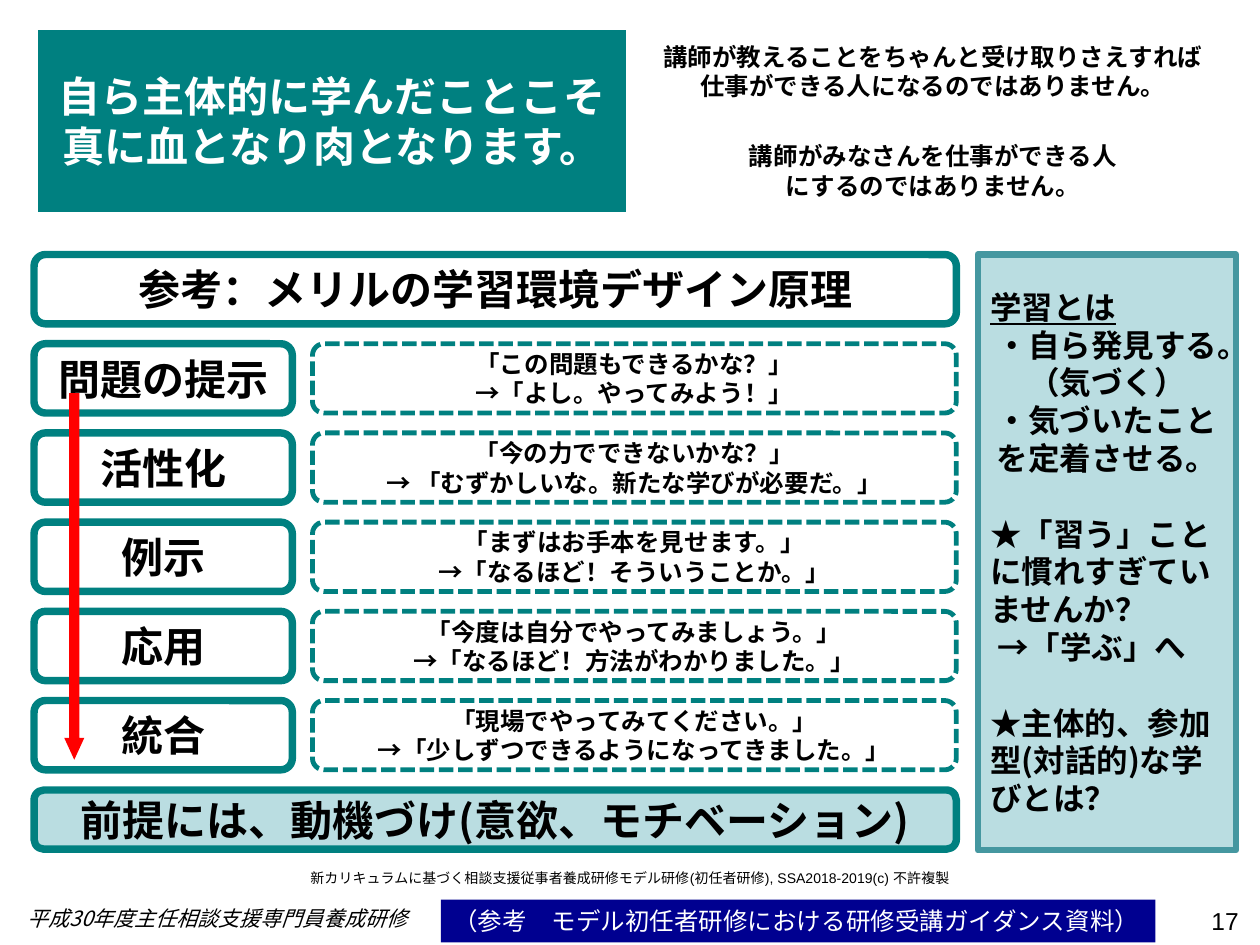
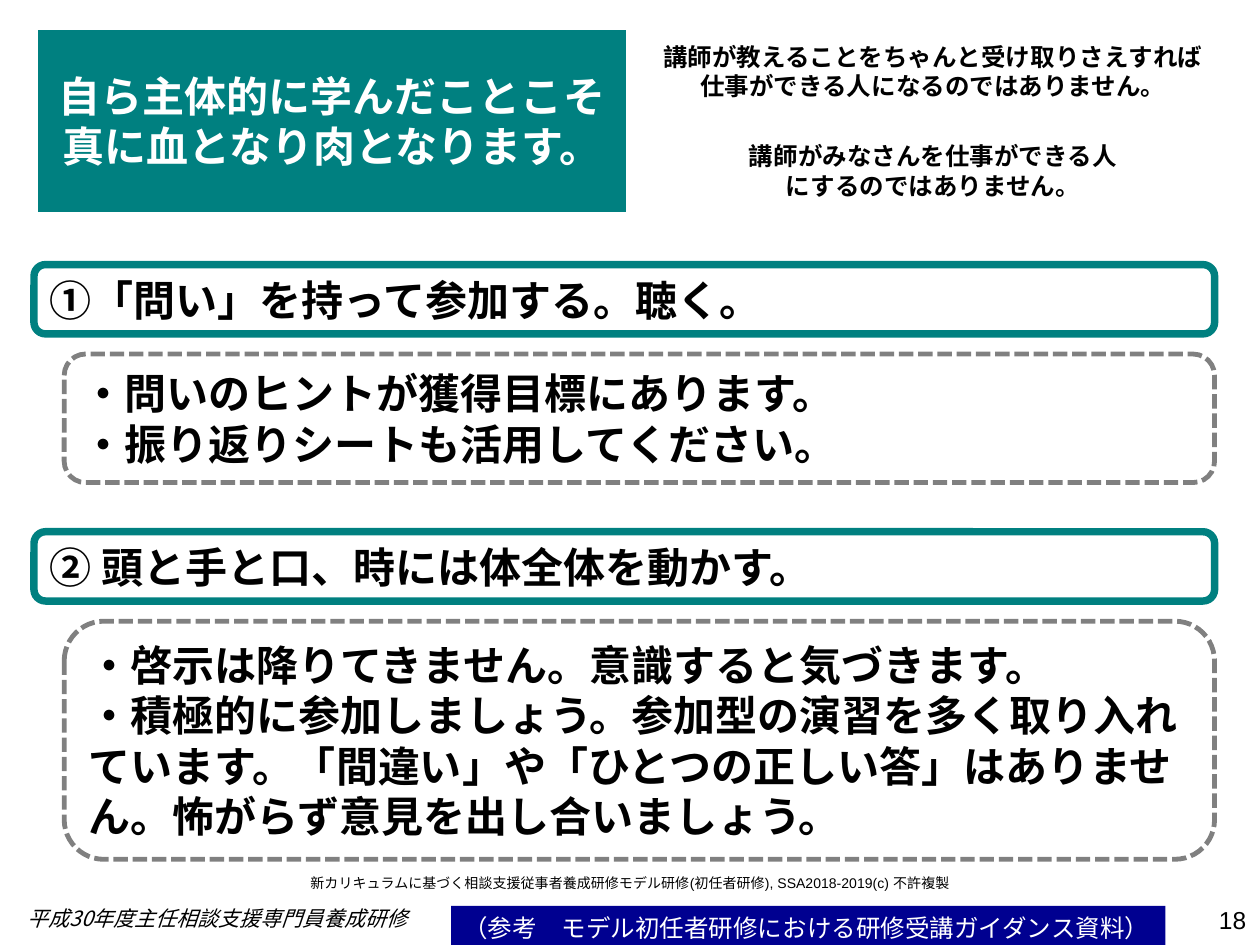
from dataclasses import dataclass
from lxml.etree import SubElement
from pptx import Presentation
from pptx.dml.color import RGBColor
from pptx.enum.dml import MSO_LINE
from pptx.enum.shapes import MSO_SHAPE
from pptx.enum.text import MSO_ANCHOR, MSO_AUTO_SIZE, PP_ALIGN
from pptx.oxml.ns import qn
from pptx.util import Inches, Pt


@dataclass(frozen=True)
class Theme:
    teal: str = "008080"
    pale: str = "BADDE1"
    steel: str = "4597A0"
    gray: str = "808080"
    red: str = "FF0000"
    navy: str = "000090"
    white: str = "FFFFFF"
    black: str = "000000"
    font: str = "Noto Sans CJK JP"
    latin: str = "Arial"
    large: int = 24
    medium: int = 18
    small: int = 14
    caption: int = 12
    credit: int = 8
    thick: float = 4.25
    edge: float = 3.5
    dashed: float = 2.75


T = Theme()
LEFT, CENTER, RIGHT = PP_ALIGN.LEFT, PP_ALIGN.CENTER, PP_ALIGN.RIGHT
TITLE = ["自ら主体的に学んだことこそ", "真に血となり肉となります。"]
REMARKS = [
    ["講師が教えることをちゃんと受け取りさえすれば", "仕事ができる人になるのではありません。"],
    ["講師がみなさんを仕事ができる人", "にするのではありません。"],
]
CREDIT = "新カリキュラムに基づく相談支援従事者養成研修モデル研修(初任者研修), SSA2018-2019(c) 不許複製"
COURSE = "平成30年度主任相談支援専門員養成研修"
BAND = "（参考　モデル初任者研修における研修受講ガイダンス資料）"
STEPS = [
    ("問題の提示", ["「この問題もできるかな？」", "→「よし。やってみよう！」"]),
    ("活性化", ["「今の力でできないかな？」", "→ 「むずかしいな。新たな学びが必要だ。」"]),
    ("例示", ["「まずはお手本を見せます。」", "→「なるほど！そういうことか。」"]),
    ("応用", ["「今度は自分でやってみましょう。」", "→「なるほど！方法がわかりました。」"]),
    ("統合", ["「現場でやってみてください。」", "→「少しずつできるようになってきました。」"]),
]
SIDEBAR = [
    ("学習とは", LEFT, 0),
    ("・自ら発見する。", CENTER, 0),
    ("（気づく）\n・気づいたことを定着させる。", CENTER, 0),
    ("★「習う」ことに慣れすぎていませんか？", LEFT, 21.6),
    (" →「学ぶ」へ", LEFT, 0),
    ("★主体的、参加型(対話的)な学びとは？", LEFT, 21.6),
]
POINTS = [
    (2.1, 1.02, "①「問い」を持って参加する。聴く。",
     ["・問いのヒントが獲得目標にあります。", "・振り返りシートも活用してください。"]),
    (4.22, 1.89, "② 頭と手と口、時には体全体を動かす。",
     ["・啓示は降りてきません。意識すると気づきます。",
      "・積極的に参加しましょう。参加型の演習を多く取り入れています。"
      "「間違い」や「ひとつの正しい答」はありません。怖がらず意見を出し合いましょう。"]),
]


def rgb(value):
    return RGBColor.from_string(value)


def write(sp, lines, size, color=T.black, align=CENTER, bold=True, italic=False,
          font=T.font, anchor=MSO_ANCHOR.MIDDLE):
    tf = sp.text_frame
    tf.word_wrap = True
    tf.auto_size = MSO_AUTO_SIZE.NONE
    tf.vertical_anchor = anchor
    for i, line in enumerate(lines):
        p = tf.add_paragraph() if i else tf.paragraphs[0]
        p.text = line
        p.alignment = align
        for r in p.runs:
            f = r.font
            f.name, f.size, f.bold, f.italic = font, Pt(size), bold, italic
            f.color.rgb = rgb(color)
            SubElement(f._element, qn("a:ea"), typeface=T.font)


def paint(sp, fill=None, line=None, width=T.thick, dash=False):
    if fill:
        sp.fill.solid()
        sp.fill.fore_color.rgb = rgb(fill)
    else:
        sp.fill.background()
    if line:
        sp.line.color.rgb = rgb(line)
        sp.line.width = Pt(width)
        if dash:
            sp.line.dash_style = MSO_LINE.SQUARE_DOT
    else:
        sp.line.fill.background()


def add_box(s, box, kind=MSO_SHAPE.ROUNDED_RECTANGLE, **style):
    sp = s.shapes.add_shape(kind, *map(Inches, box))
    sp.shadow.inherit = False
    paint(sp, **style)
    return sp


def add_label(s, box, text, size, **style):
    write(s.shapes.add_textbox(*map(Inches, box)), [text], size,
          bold=False, anchor=MSO_ANCHOR.TOP, **style)


def add_header(s, box):
    x, y, w, h = box
    title_w, remark_x, remark_h = 4.73, 4.81, 0.71
    title = s.shapes.title
    title.left, title.top, title.width, title.height = map(Inches, (x, y, title_w, h))
    geom = SubElement(title._element.spPr, qn("a:prstGeom"), prst="roundRect")
    SubElement(geom, qn("a:avLst"))
    paint(title, T.teal, T.white)
    write(title, TITLE, T.large, T.white)
    for i, lines in enumerate(REMARKS):
        top = y + i * (h - remark_h)
        sp = add_box(s, (x + remark_x, top, w - remark_x, remark_h), line=T.white)
        write(sp, lines, T.small)


def add_footer(s, page, credit_y, band_at, page_at):
    add_label(s, (0, credit_y, 10, 0.4), CREDIT, T.credit, font=T.latin)
    add_label(s, (*page_at, 2.33, 0.52), page, T.small, font=T.latin, align=RIGHT)
    add_label(s, (0.12, 7.14, 3.94, 0.3), COURSE, T.caption, align=LEFT, italic=True)
    band = add_box(s, (*band_at, 5.67, 0.34), MSO_SHAPE.RECTANGLE, fill=T.navy)
    write(band, [BAND], T.small, T.white, LEFT, bold=False)


def add_principles(s, box):
    x, y, w, h = box
    row_h, name_w, talk_x, base_h = 0.55, 2.05, 2.21, 0.47
    pitch = (h - base_h - row_h - 0.16) / len(STEPS)
    heading = add_box(s, (x, y, w, row_h), fill=T.white, line=T.teal)
    write(heading, ["参考：メリルの学習環境デザイン原理"], T.large)
    for i, (name, talk) in enumerate(STEPS, 1):
        top = y + i * pitch
        write(add_box(s, (x, top, name_w, row_h), line=T.teal), [name], T.large)
        sp = add_box(s, (x + talk_x, top, w - talk_x, row_h),
                     line=T.teal, width=T.dashed, dash=True)
        write(sp, talk, T.small)
    base = add_box(s, (x, y + h - base_h, w, base_h), fill=T.pale, line=T.teal)
    write(base, ["前提には、動機づけ(意欲、モチベーション)"], T.large)
    arrow = add_box(s, (x + 0.24, y + 1.1, 0.16, 2.91), MSO_SHAPE.DOWN_ARROW, fill=T.red)
    arrow.adjustments[1] = 1.09


def add_sidebar(s, box):
    sp = add_box(s, box, MSO_SHAPE.RECTANGLE, fill=T.pale, line=T.steel, width=T.edge)
    write(sp, [text for text, _, _ in SIDEBAR], T.medium)
    paragraphs = sp.text_frame.paragraphs
    for p, (_, align, gap) in zip(paragraphs, SIDEBAR):
        p.alignment = align
        p.space_before = Pt(gap)
    paragraphs[0].runs[0].font.underline = True


def add_point(s, box, heading, lines):
    x, y, w, h = box
    indent, body_y = 0.24, 0.71
    sp = add_box(s, (x, y, w, 0.55), fill=T.white, line=T.teal)
    write(sp, [heading], T.large, align=LEFT)
    sp = add_box(s, (x + indent, y + body_y, w - indent, h - body_y),
                 line=T.gray, width=T.dashed, dash=True)
    write(sp, lines, T.large, align=LEFT)


def new_slide(prs):
    s = prs.slides.add_slide(prs.slide_layouts[5])
    add_header(s, (0.27, 0.21, 9.46, 1.5))
    return s


def build_principles_slide(prs):
    s = new_slide(prs)
    add_principles(s, (0.27, 2.02, 7.32, 4.72))
    add_sidebar(s, (7.76, 2.02, 2.05, 4.73))
    add_footer(s, "17", 6.85, (3.5, 7.14), (7.6, 7.14))


def build_attitude_slide(prs):
    s = new_slide(prs)
    for top, body_h, heading, lines in POINTS:
        add_point(s, (0.27, top, 9.37, 0.71 + body_h), heading, lines)
    add_footer(s, "18", 6.89, (3.58, 7.19), (7.66, 7.13))


def main():
    prs = Presentation()
    prs.slide_width, prs.slide_height = Inches(10), Inches(7.5)
    build_principles_slide(prs)
    build_attitude_slide(prs)
    prs.save("out.pptx")


if __name__ == "__main__":
    main()
